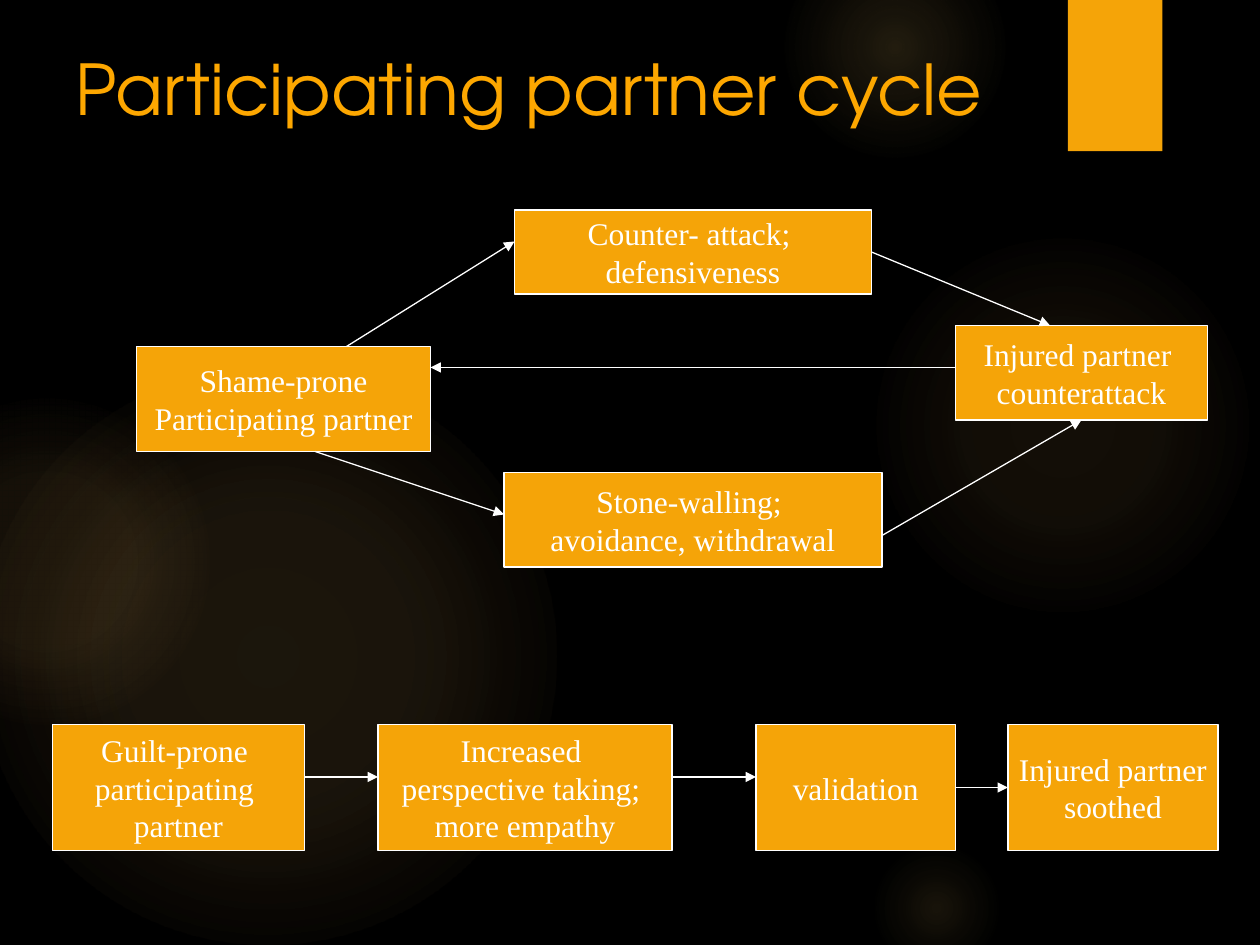
from lxml import etree
from pptx import Presentation
from pptx import util as u
from pptx.dml.color import RGBColor
from pptx.enum import shapes, text
from pptx.oxml import parse_xml
from pptx.oxml.ns import nsdecls, qn

BLACK = RGBColor(0, 0, 0)
WHITE = RGBColor(255, 255, 255)
AMBER = RGBColor(0xF5, 0xA4, 0x08)
GOLD = RGBColor(0xFD, 0xA7, 0x00)
GLOW = RGBColor(0xFA, 0xC9, 0x6A)
COLS, ROWS = 120, 90
CELL = u.Inches(10) // COLS

GLOWS = [
    (82.7, 22, 37, [(0, 7), (36, 6), (69, 0)]),
    (74.7, -6, 21, [(0, 14), (36, 7), (73, 0)]),
    (82.7, 80, 13, [(0, 10), (31, 5), (66, 0)]),
    (-2, 35, 55, [(0, 11), (36, 10), (75, 0)]),
    (-11, 38, 31, [(0, 8), (36, 8), (72, 0)]),
]
CYCLE = [
    (49, 20, 34, 8, ["Counter- attack; ", "defensiveness"]),
    (48, 45, 36, 9, ["Stone-walling; ", "avoidance, withdrawal"]),
    (91, 31, 24, 9, ["Injured partner ", "counterattack"]),
    (13, 33, 28, 10, ["Shame-prone", "Participating partner"]),
]
CHAIN = [
    (5, 24, ["Guilt-prone ", "participating ", "partner"]),
    (36, 28, ["Increased ", "perspective taking; ", "more empathy"]),
    (72, 19, ["validation"]),
    (96, 20, ["Injured partner", "soothed"]),
]
LINKS = [
    (33, 33, 49, 23),
    (30, 43, 48, 49),
    (91, 35, 41, 35),
    (83, 24, 100, 31),
    (84, 51, 103, 40),
]
CHAIN_TOP, CHAIN_TALL = 69, 12
LINK_ROWS = [74, 74, 75]


def grid(*cells):
    return [round(n * CELL) for n in cells]


def add_form(slide, kind, *cells):
    form = slide.shapes.add_shape(kind, *grid(*cells))
    form.shadow.inherit = False
    form.line.fill.background()
    return form


def add_glow(slide, left, top, size, stops):
    form = add_form(slide, shapes.MSO_SHAPE.OVAL, left, top, size, size)
    form.fill.background()
    marks = "".join(
        f'<a:gs pos="{pos * 1000}"><a:srgbClr val="{GLOW}">'
        f'<a:alpha val="{alpha * 1000}"/></a:srgbClr></a:gs>'
        for pos, alpha in stops
    )
    fade = parse_xml(
        f'<a:gradFill {nsdecls("a")} rotWithShape="1"><a:gsLst>{marks}</a:gsLst>'
        '<a:path path="circle"><a:fillToRect l="50000" t="50000" '
        'r="50000" b="50000"/></a:path></a:gradFill>'
    )
    props = form.element.spPr
    props.replace(props.find(qn("a:noFill")), fade)


def add_block(slide, *cells):
    form = add_form(slide, shapes.MSO_SHAPE.RECTANGLE, *cells)
    form.fill.solid()
    form.fill.fore_color.rgb = AMBER
    return form


def add_run(para, words, face, size, color):
    run = para.add_run()
    run.text = words
    run.font.name = face
    run.font.size = u.Pt(size)
    run.font.color.rgb = color


def add_box(slide, left, top, wide, tall, lines):
    box = add_block(slide, left, top, wide, tall)
    box.line.color.rgb = WHITE
    box.line.width = u.Pt(0.75)
    frame = box.text_frame
    frame.word_wrap = False
    frame.vertical_anchor = text.MSO_ANCHOR.MIDDLE
    for row, words in enumerate(lines):
        para = frame.add_paragraph() if row else frame.paragraphs[0]
        para.alignment = text.PP_ALIGN.CENTER
        add_run(para, words, "Times New Roman", 18, WHITE)


def add_arrow(slide, *ends):
    arrow = slide.shapes.add_connector(shapes.MSO_CONNECTOR.STRAIGHT, *grid(*ends))
    arrow.line.color.rgb = WHITE
    arrow.line.width = u.Pt(0.75)
    etree.SubElement(arrow.line._get_or_add_ln(), qn("a:tailEnd"), type="triangle")
    etree.SubElement(arrow.element.spPr, qn("a:effectLst"))


def add_title(slide, words):
    frame = slide.shapes.add_textbox(*grid(6, 3.6, 108, 9.4)).text_frame
    frame.word_wrap = True
    frame.vertical_anchor = text.MSO_ANCHOR.MIDDLE
    add_run(frame.paragraphs[0], words, "TeX Gyre Adventor", 40, GOLD)


def add_chain(slide):
    for left, wide, lines in CHAIN:
        add_box(slide, left, CHAIN_TOP, wide, CHAIN_TALL, lines)
    for here, after, row in zip(CHAIN, CHAIN[1:], LINK_ROWS):
        add_arrow(slide, here[0] + here[1], row, after[0], row)


def main():
    deck = Presentation()
    deck.slide_width, deck.slide_height = grid(COLS, ROWS)
    slide = deck.slides.add_slide(deck.slide_layouts[6])
    slide.background.fill.solid()
    slide.background.fill.fore_color.rgb = BLACK
    for glow in GLOWS:
        add_glow(slide, *glow)
    add_block(slide, 101.7, 0, 9, 14.4)
    add_title(slide, "Participating partner cycle")
    for box in CYCLE:
        add_box(slide, *box)
    for link in LINKS:
        add_arrow(slide, *link)
    add_chain(slide)
    deck.save("out.pptx")


if __name__ == "__main__":
    main()
